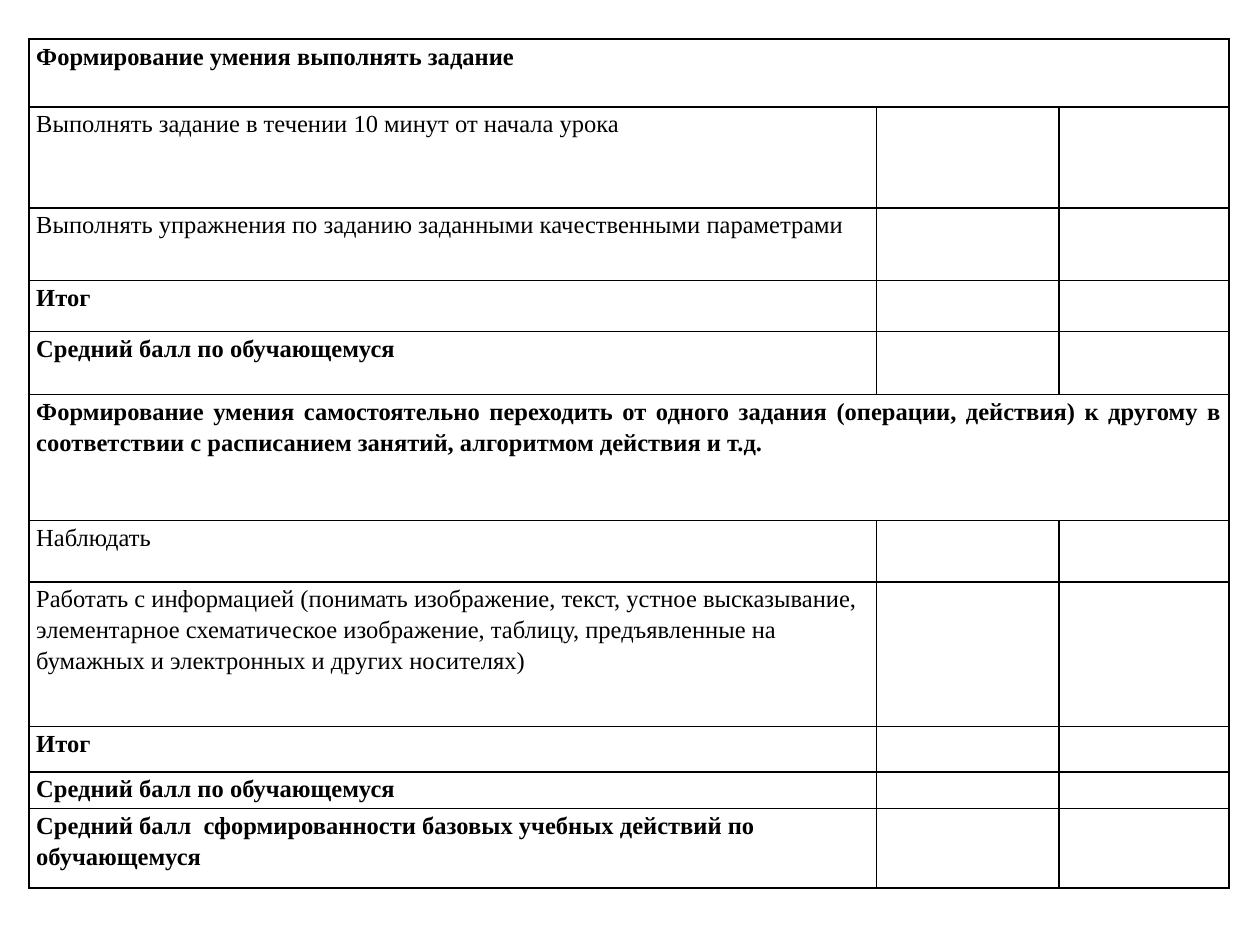
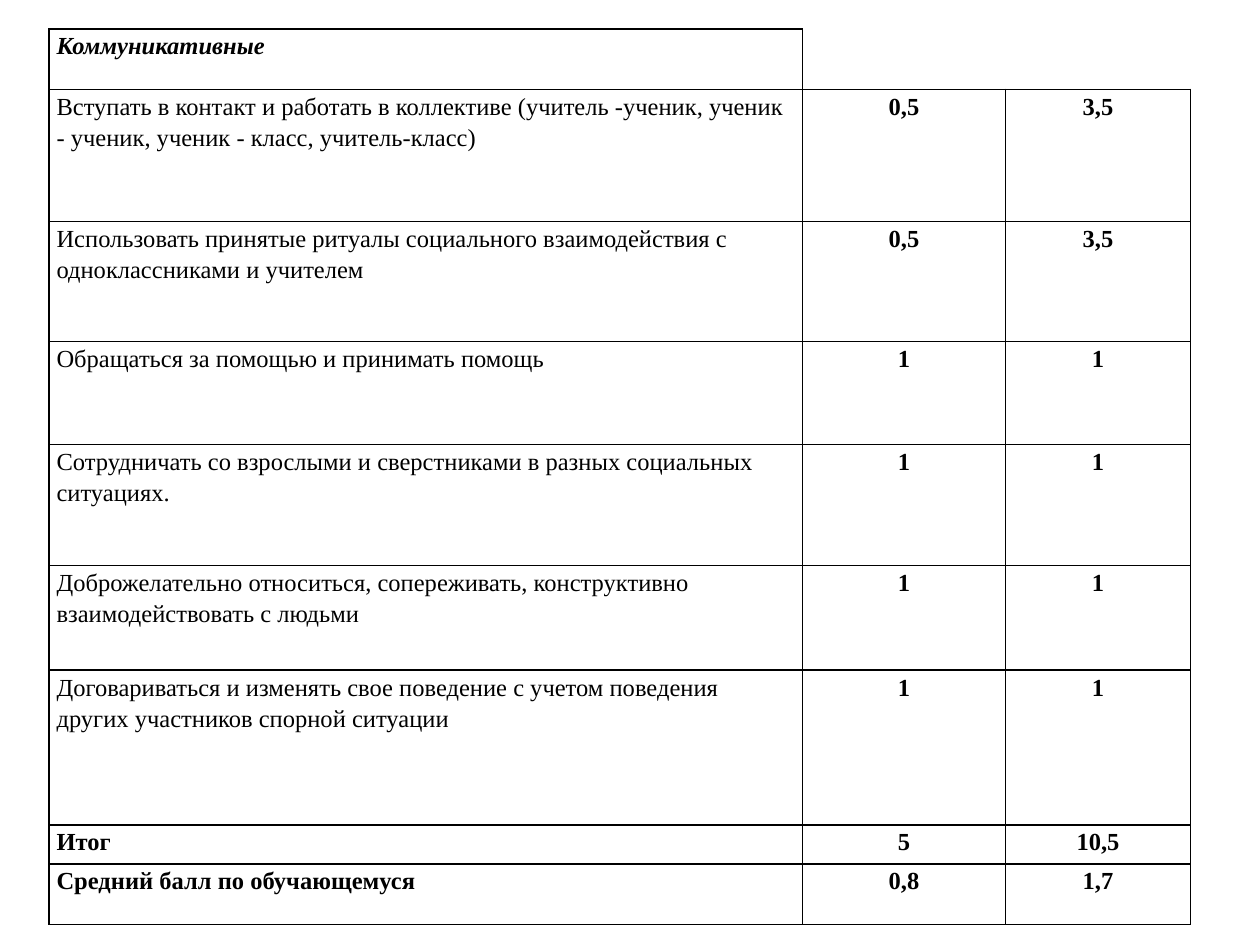
from lxml import etree
from pptx import Presentation
from pptx.dml.color import RGBColor
from pptx.enum.text import PP_ALIGN
from pptx.oxml.ns import qn
from pptx.util import Cm, Pt

LEFT, CENTER, JUSTIFY = PP_ALIGN.LEFT, PP_ALIGN.CENTER, PP_ALIGN.JUSTIFY

# Shared look
COLORS = {"text": "000000", "border": "000000"}
FONT = "Times New Roman"
TEXT_SIZE = Pt(14)
LINE_SPACING = 1.15
SIDE_MARGIN = Cm(0.15)
BORDER_WIDTH = Pt(1)
SIDES = "LRTB"

# Label styles: bold, italic, alignment
STYLES = {
    "skill": (False, False, LEFT),
    "skill_justified": (False, False, JUSTIFY),
    "total": (True, False, LEFT),
    "heading": (True, False, LEFT),
    "heading_justified": (True, False, JUSTIFY),
    "group": (True, True, LEFT),
    "score": (True, False, CENTER),
}

# Rows: height in cm, label style, label, scores
# A heading spans the whole row; a group has an open cell to its right.
TABLES = [
    {
        "origin": (0.58, 0.79),
        "columns": (17.09, 3.68, 3.43),
        "rows": [
            (1.37, "heading", "Формирование умения выполнять задание", ()),
            (2.03, "skill_justified", "Выполнять задание в течении 10 минут от начала урока", ()),
            (1.47, "skill_justified",
             "Выполнять упражнения по заданию заданными качественными параметрами", ()),
            (1.02, "total", "Итог", ()),
            (1.27, "total", "Средний балл по обучающемуся", ()),
            (2.54, "heading_justified",
             "Формирование умения самостоятельно переходить от одного задания (операции, "
             "действия) к другому в соответствии с расписанием занятий, алгоритмом действия "
             "и т.д.", ()),
            (1.24, "skill", "Наблюдать", ()),
            (2.92, "skill",
             "Работать с информацией (понимать изображение, текст, устное высказывание, "
             "элементарное схематическое изображение, таблицу, предъявленные на бумажных и "
             "электронных и других носителях)", ()),
            (0.91, "total", "Итог", ()),
            (0.74, "total", "Средний балл по обучающемуся", ()),
            (1.6, "total",
             "Средний балл  сформированности базовых учебных действий по обучающемуся", ()),
        ],
    },
    {
        "origin": (0.99, 0.58),
        "columns": (15.19, 4.09, 3.73),
        "rows": [
            (1.22, "group", "Коммуникативные", ()),
            (2.67, "skill",
             "Вступать в контакт и работать в коллективе (учитель -ученик, ученик - ученик, "
             "ученик - класс, учитель-класс)", ("0,5", "3,5")),
            (2.41, "skill",
             "Использовать принятые ритуалы социального взаимодействия с одноклассниками "
             "и учителем", ("0,5", "3,5")),
            (2.08, "skill", "Обращаться за помощью и принимать помощь", ("1", "1")),
            (2.44, "skill",
             "Сотрудничать со взрослыми и сверстниками в разных социальных ситуациях.",
             ("1", "1")),
            (2.11, "skill",
             "Доброжелательно относиться, сопереживать, конструктивно взаимодействовать "
             "с людьми", ("1", "1")),
            (3.12, "skill",
             "Договариваться и изменять свое поведение с учетом поведения других участников "
             "спорной ситуации", ("1", "1")),
            (0.79, "total", "Итог", ("5", "10,5")),
            (1.22, "total", "Средний балл по обучающемуся", ("0,8", "1,7")),
        ],
    },
]


def set_borders(cell, drawn=SIDES):
    """Draw the named sides of a cell and hide the others."""
    properties = cell._tc.get_or_add_tcPr()
    for side in SIDES:
        line = etree.SubElement(properties, qn(f"a:ln{side}"), w=str(BORDER_WIDTH))
        if side in drawn:
            fill = etree.SubElement(line, qn("a:solidFill"))
            etree.SubElement(fill, qn("a:srgbClr"), val=COLORS["border"])
        else:
            etree.SubElement(line, qn("a:noFill"))


def fill_cell(cell, text, style, borders=SIDES):
    bold, italic, alignment = STYLES[style]
    cell.margin_left = cell.margin_right = SIDE_MARGIN
    cell.margin_top = cell.margin_bottom = 0
    set_borders(cell, borders)
    cell.fill.background()

    cell.text = text
    para = cell.text_frame.paragraphs[0]
    para.alignment = alignment
    para.line_spacing = LINE_SPACING
    font = para.font
    font.name, font.size = FONT, TEXT_SIZE
    font.bold, font.italic = bold, italic
    font.color.rgb = RGBColor.from_string(COLORS["text"])
    if not text:
        # An empty cell takes its line height from the end mark
        etree.SubElement(para._p, qn("a:endParaRPr"), sz=str(int(TEXT_SIZE.pt * 100)))


def add_score_table(page, origin, columns, rows):
    left, top = origin
    height = sum(row[0] for row in rows)
    frame = page.shapes.add_table(len(rows), len(columns), Cm(left), Cm(top),
                                  Cm(sum(columns)), Cm(height))
    table = frame.table
    table.first_row = table.horz_banding = False
    for column, width in zip(table.columns, columns):
        column.width = Cm(width)

    last = len(columns) - 1
    for index, (row_height, style, label, scores) in enumerate(rows):
        table.rows[index].height = Cm(row_height)
        fill_cell(table.cell(index, 0), label, style)
        for number in range(1, len(columns)):
            score = scores[number - 1] if scores else ""
            borders = SIDES
            if style == "group":
                borders = "LB" if number == 1 else "B"
            fill_cell(table.cell(index, number), score, "score", borders)
        if style.startswith("heading"):
            table.cell(index, 0).merge(table.cell(index, last))
        elif style == "group":
            table.cell(index, 1).merge(table.cell(index, last))


def main():
    deck = Presentation()
    deck.slide_width, deck.slide_height = Cm(25.4), Cm(19.05)
    blank = deck.slide_layouts[6]
    for content in TABLES:
        add_score_table(deck.slides.add_slide(blank), **content)
    deck.save("out.pptx")


if __name__ == "__main__":
    main()
